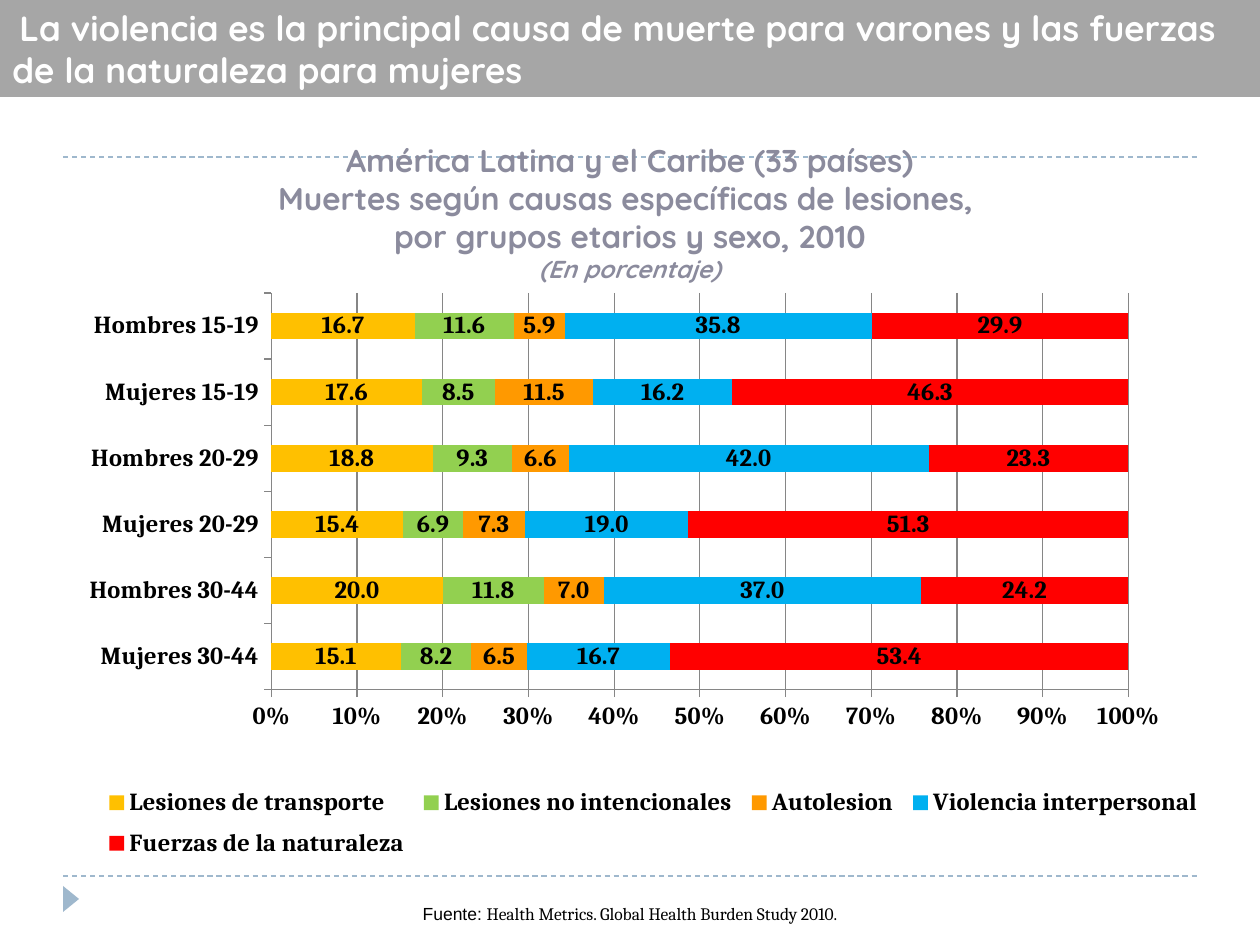
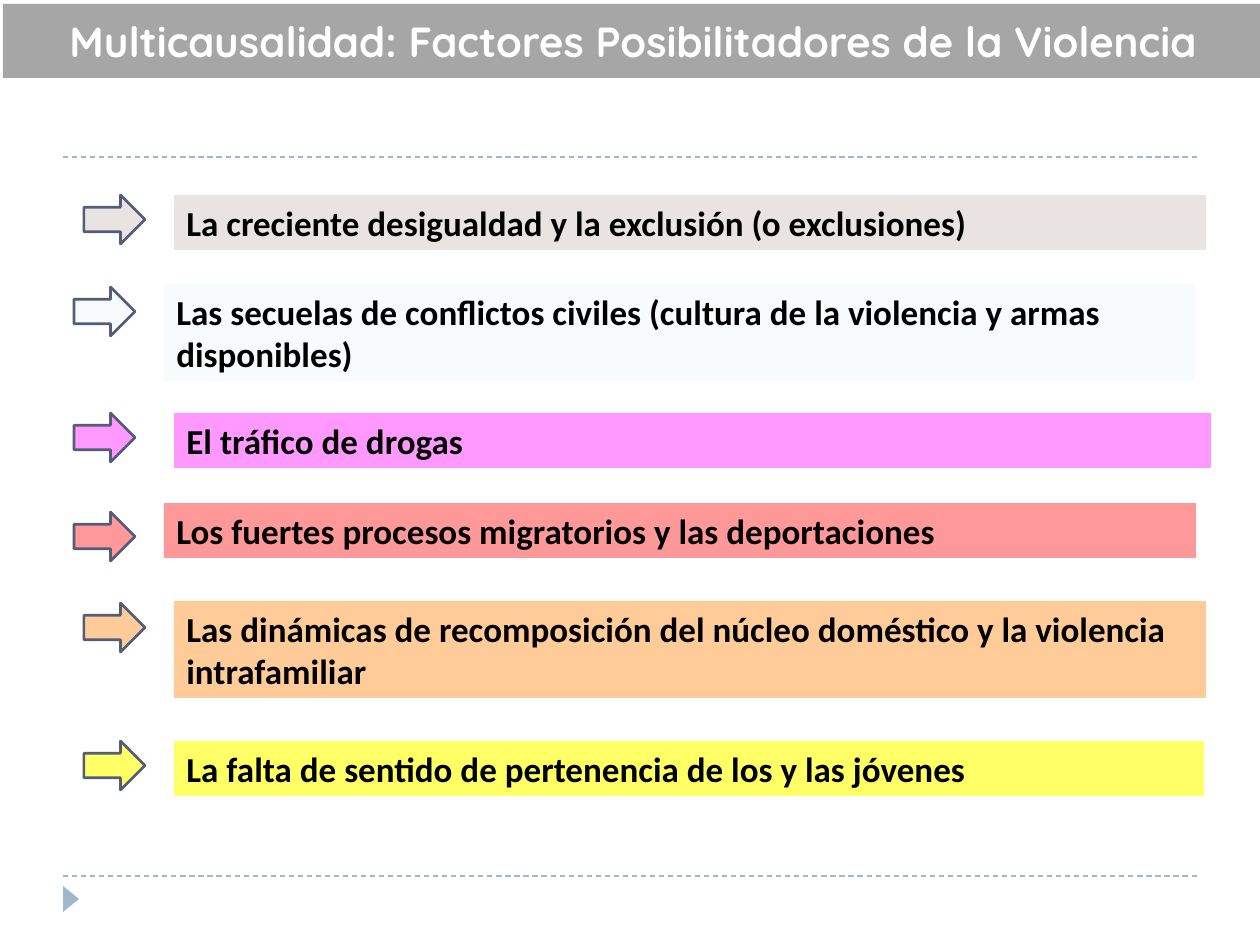
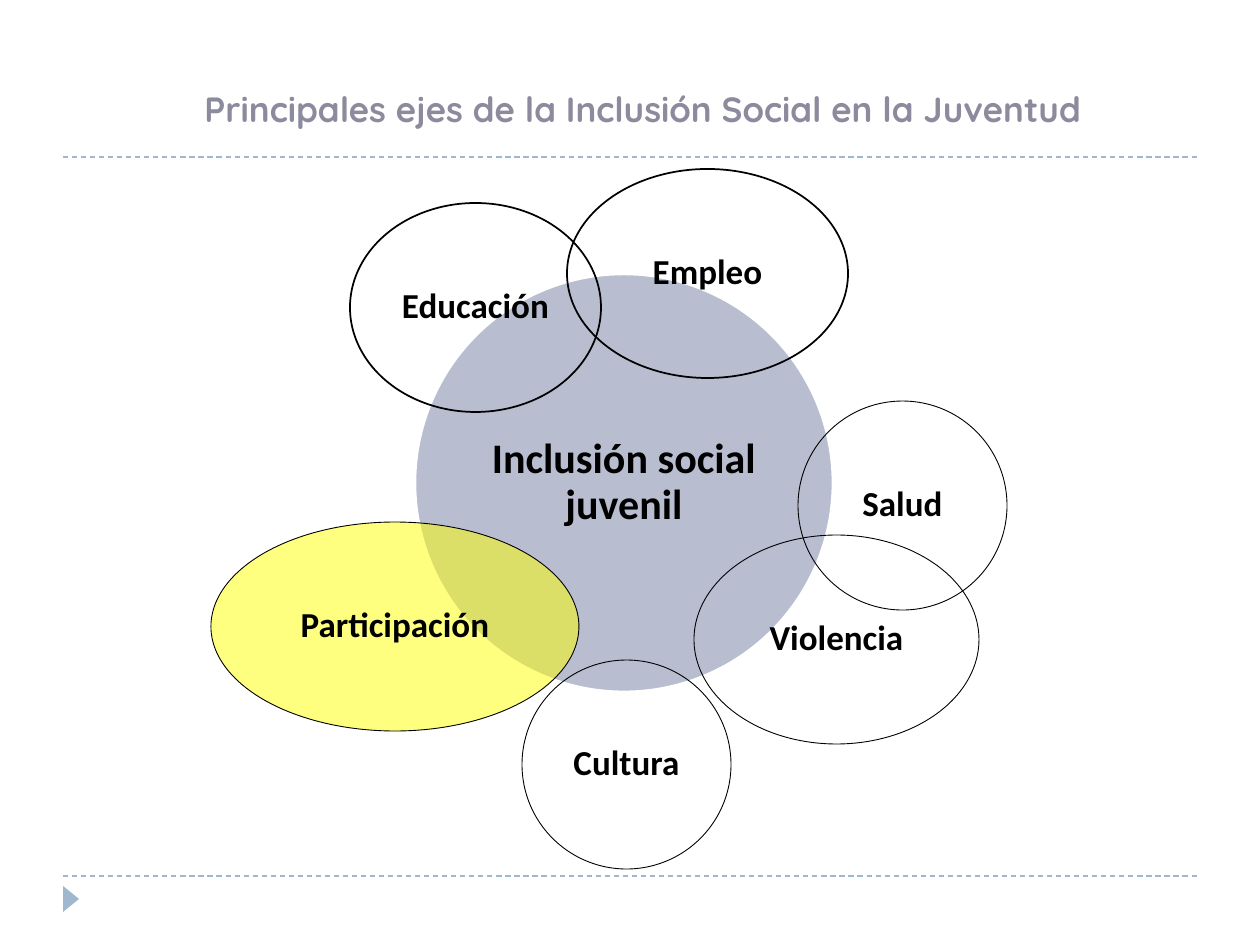
from lxml.etree import SubElement
from pptx import Presentation
from pptx.chart.data import CategoryChartData
from pptx.dml.color import RGBColor
from pptx.enum.chart import XL_CHART_TYPE, XL_LEGEND_POSITION, XL_TICK_MARK
from pptx.enum.dml import MSO_LINE
from pptx.enum.shapes import MSO_CONNECTOR, MSO_SHAPE
from pptx.enum.text import MSO_ANCHOR, PP_ALIGN
from pptx.oxml import parse_xml
from pptx.oxml.ns import nsdecls, qn
from pptx.util import Pt

PX = 914400 / 126
COLORS = {
    "band": "A6A6A6", "white": "FFFFFF", "black": "000000",
    "heading": "8B8B9D", "accent": "9FB8CD", "arrow": "545C79",
    "core": "727CA3", "highlight": "FFFF00", "grid": "868686",
}
HEADING_FONT, BODY_FONT, CHART_FONT = "Quicksand", "Calibri", "Cambria"


def add_block(slide, kind, box, fill=None, line=None, line_width=1, alpha=None):
    """Add a preset shape, or a text box when kind is None; box is in px."""
    box = [round(n * PX) for n in box]
    if kind is None:
        block = slide.shapes.add_textbox(*box)
    else:
        block = slide.shapes.add_shape(kind, *box)
        block.shadow.inherit = False
        if fill:
            block.fill.solid()
            block.fill.fore_color.rgb = RGBColor.from_string(fill)
        else:
            block.fill.background()
        if line:
            block.line.color.rgb = RGBColor.from_string(line)
            block.line.width = Pt(line_width)
        else:
            block.line.fill.background()
    if alpha:
        color = block._element.spPr.find(qn("a:solidFill"))[0]
        SubElement(color, qn("a:alpha"), val=str(alpha * 1000))
    block.text_frame.word_wrap = True
    return block


def write(block, lines, size, color, font=BODY_FONT, align=PP_ALIGN.LEFT,
          anchor=MSO_ANCHOR.TOP, spacing=None):
    frame = block.text_frame
    frame.vertical_anchor = anchor
    frame.text = lines
    for paragraph in frame.paragraphs:
        paragraph.alignment = align
        paragraph.line_spacing = spacing
        paragraph.font.name = font
        paragraph.font.size = Pt(size)
        paragraph.font.bold = True
        paragraph.font.color.rgb = RGBColor.from_string(color)
    return frame.paragraphs


prs = Presentation()
prs.slide_width, prs.slide_height = round(1260 * PX), round(945 * PX)
causes, factors, axes = slides = [
    prs.slides.add_slide(prs.slide_layouts[6]) for _ in range(3)]

# Shared dashed rules and corner mark
for slide in slides:
    for y in (876, 157):
        rule = slide.shapes.add_connector(
            MSO_CONNECTOR.STRAIGHT,
            *[round(n * PX) for n in (63, y, 1197, y)])
        rule.line.color.rgb = RGBColor.from_string(COLORS["accent"])
        rule.line.width = Pt(0.75)
        rule.line.dash_style = MSO_LINE.DASH
        SubElement(rule._element.spPr, qn("a:effectLst"))
    corner = add_block(slide, MSO_SHAPE.ISOSCELES_TRIANGLE, (58, 891, 26, 16),
                       COLORS["accent"])
    corner.rotation = 90

# Slide 1: causes of death
data = CategoryChartData(number_format="0.0")
data.categories = ["Mujeres 30-44", "Hombres 30-44", "Mujeres 20-29",
                   "Hombres 20-29", "Mujeres 15-19", "Hombres 15-19"]
injuries = [
    ("Lesiones de transporte", "FFC000", (15.1, 20, 15.4, 18.8, 17.6, 16.7)),
    ("Lesiones no intencionales", "92D050", (8.2, 11.8, 6.9, 9.3, 8.5, 11.6)),
    ("Autolesion", "FF9900", (6.5, 7, 7.3, 6.6, 11.5, 5.9)),
    ("Violencia interpersonal", "00B0F0", (16.7, 37, 19, 42, 16.2, 35.8)),
    ("Fuerzas de la naturaleza", "FF0000", (53.4, 24.2, 51.3, 23.3, 46.3, 29.9)),
]
for name, _, values in injuries:
    data.add_series(name, values)
chart = causes.shapes.add_chart(
    XL_CHART_TYPE.BAR_STACKED_100,
    *[round(n * PX) for n in (63, 262, 1158, 620)], data).chart
chart.has_title = False
chart.font.name = CHART_FONT
chart.font.size = Pt(14)
chart.font.bold = True
chart.font.color.rgb = RGBColor.from_string(COLORS["black"])

plot = chart.plots[0]
plot.gap_width, plot.overlap, plot.vary_by_categories = 150, 100, False
plot.has_data_labels = True
plot.data_labels.show_value = True
plot.data_labels.number_format = "0.0"
plot.data_labels.number_format_is_linked = False
for series, (_, color, _) in zip(plot.series, injuries):
    series.format.fill.solid()
    series.format.fill.fore_color.rgb = RGBColor.from_string(color)

share = chart.value_axis
share.minimum_scale, share.maximum_scale, share.major_unit = 0, 1, 0.1
share.has_major_gridlines = True
share.tick_labels.number_format = "0%"
share.tick_labels.number_format_is_linked = False
for axis in (share, chart.category_axis):
    axis.major_tick_mark = XL_TICK_MARK.OUTSIDE
for stroke in (share.format, share.major_gridlines.format, chart.category_axis.format):
    stroke.line.color.rgb = RGBColor.from_string(COLORS["grid"])
    stroke.line.width = Pt(0.75)

chart.has_legend = True
chart.legend.position = XL_LEGEND_POSITION.RIGHT
chart.legend.include_in_layout = False
plot_area = chart._chartSpace.chart.plotArea
for part, index, target, frame in (
        (plot_area, 0, '<c:layoutTarget val="inner"/>', (0.18, 0.05, 0.74, 0.64)),
        (chart.legend._element, 1, "", (0.03, 0.83, 0.96, 0.15))):
    for old in part.findall(qn("c:layout")):
        part.remove(old)
    sides = "".join(f'<c:{side} val="{value}"/>' for side, value in zip("xywh", frame))
    part.insert(index, parse_xml(
        f'<c:layout {nsdecls("c")}><c:manualLayout>{target}'
        f'<c:xMode val="edge"/><c:yMode val="edge"/>{sides}'
        '</c:manualLayout></c:layout>'))

subtitle = write(
    add_block(causes, None, (0, 132, 1260, 161)),
    "América Latina y el Caribe (33 países)\n"
    "Muertes según causas específicas de lesiones, \n"
    "por grupos etarios y sexo, 2010\n(En porcentaje)",
    18, COLORS["heading"], HEADING_FONT, PP_ALIGN.CENTER, MSO_ANCHOR.MIDDLE)
subtitle[-1].font.size = Pt(14)
subtitle[-1].font.italic = True

source = add_block(causes, None, (0, 882, 1260, 63)).text_frame
source.vertical_anchor = MSO_ANCHOR.MIDDLE
citation = source.paragraphs[0]
citation.alignment = PP_ALIGN.CENTER
citation.font.size = Pt(10)
citation.font.color.rgb = RGBColor.from_string(COLORS["black"])
for words, font in (("Fuente: ", "Arial"),
                    ("Health Metrics. Global Health Burden Study 2010.", CHART_FONT)):
    run = citation.add_run()
    run.text = words
    run.font.name = font

title = write(
    add_block(causes, MSO_SHAPE.RECTANGLE, (0, 0, 1260, 97), COLORS["band"]),
    "La violencia es la principal causa de muerte para varones y las fuerzas "
    "de la naturaleza para mujeres",
    20, COLORS["white"], HEADING_FONT)
title[0]._p.get_or_add_pPr().set("indent", str(round(7 * PX)))

# Slide 2: enabling factors
write(add_block(factors, MSO_SHAPE.RECTANGLE, (3, 4, 1260, 74), COLORS["band"]),
      "Multicausalidad: Factores Posibilitadores de la Violencia",
      24, COLORS["white"], HEADING_FONT, PP_ALIGN.CENTER, spacing=1.1)

# Factor, colour, arrow left and top, bar left, top, width and height
for factor, color, (arrow_x, arrow_y), bar in (
        ("La creciente desigualdad y la exclusión (o exclusiones)",
         "E9E3E1", (84, 195), (174, 195, 1032, 55)),
        ("Las secuelas de conflictos civiles (cultura de la violencia y armas disponibles)",
         "F8FBFB", (74, 287), (164, 284, 1031, 97)),
        ("El tráfico de drogas",
         "FF99FF", (74, 413), (174, 413, 1037, 55)),
        ("Los fuertes procesos migratorios y las deportaciones",
         "FF9999", (74, 512), (164, 503, 1032, 55)),
        ("Las dinámicas de recomposición del núcleo doméstico y la violencia intrafamiliar",
         "FFCC99", (84, 603), (174, 601, 1032, 97)),
        ("La falta de sentido de pertenencia de los y las jóvenes",
         "FFFF66", (84, 741), (174, 741, 1030, 55))):
    add_block(factors, MSO_SHAPE.RIGHT_ARROW, (arrow_x, arrow_y, 61, 49),
              color, COLORS["arrow"], 1.5)
    write(add_block(factors, MSO_SHAPE.RECTANGLE, bar, color),
          factor, 20, COLORS["black"])

# Slide 3: axes of inclusion, each with box, fill, line, line width and text size
for label, box, fill, line, width, size in (
        ("Inclusión social juvenil", (415, 274, 418, 418),
         COLORS["core"], COLORS["white"], 1.5, 24),
        ("Educación", (350, 203, 251, 209), None, COLORS["black"], 1, 20),
        ("Empleo", (567, 169, 281, 209), None, COLORS["black"], 1, 20),
        ("Salud", (798, 401, 209, 209), None, COLORS["black"], 0.5, 20),
        ("Cultura", (522, 660, 209, 209), None, COLORS["black"], 0.5, 20),
        ("Participación", (211, 522, 368, 209),
         COLORS["highlight"], COLORS["black"], 0.5, 20),
        ("Violencia", (694, 535, 285, 209), None, COLORS["black"], 0.5, 20)):
    circle = add_block(axes, MSO_SHAPE.OVAL, box, fill, line, width,
                       alpha=50 if fill else None)
    inner = circle.text_frame
    inner.margin_left = inner.margin_right = round(4 * PX)
    inner.margin_top = inner.margin_bottom = round(4 * PX)
    write(circle, label, size, COLORS["black"], align=PP_ALIGN.CENTER,
          anchor=MSO_ANCHOR.MIDDLE, spacing=0.9)

heading = add_block(axes, None, (192, 81, 925, 55))
heading.text_frame.word_wrap = False
write(heading, "Principales ejes de la Inclusión Social en la Juventud",
      20, COLORS["heading"], HEADING_FONT)

prs.save("out.pptx")
